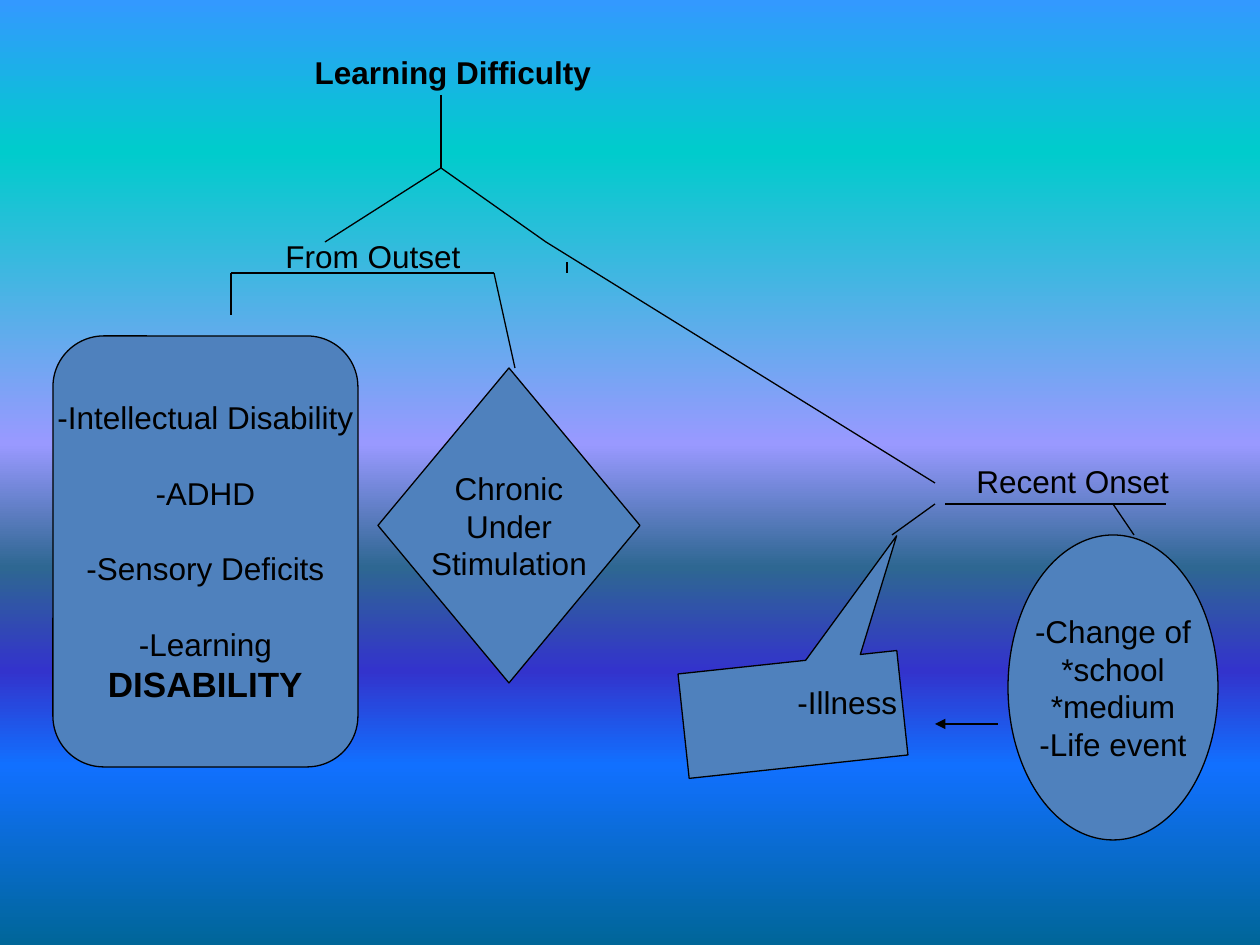
from lxml.etree import SubElement
from pptx import Presentation
from pptx.dml.color import RGBColor
from pptx.enum.shapes import MSO_CONNECTOR, MSO_SHAPE
from pptx.enum.text import MSO_ANCHOR as ANCHOR, MSO_AUTO_SIZE as FIT, PP_ALIGN as ALIGN
from pptx.oxml.ns import qn
from pptx.util import Pt

PX = 914400 / 126
INK, PANEL = "000000", "4F81BD"
BACKDROP = [(0, "3399FF"), (16, "00CCCC"), (47, "9999FF"), (60, "2E6792"),
            (71, "3333CC"), (81, "1170FF"), (100, "006699")]
BODY = {"name": "Arial", "size": Pt(18), "bold": False}
HEADING = {**BODY, "bold": True}
STRONG = {**HEADING, "size": Pt(20)}


def px(*lengths):
    return [round(length * PX) for length in lengths]


def color(hex_value):
    return RGBColor.from_string(hex_value)


def paint_background(slide):
    fill = slide.background.fill
    fill.gradient()
    fill.gradient_angle = 270
    stops = next(slide.element.iter(qn("a:gsLst")))
    for stop in list(stops):
        stops.remove(stop)
    for percent, hex_value in BACKDROP:
        stop = SubElement(stops, qn("a:gs"), pos=str(percent * 1000))
        SubElement(stop, qn("a:srgbClr"), val=hex_value)


def write(frame, lines, align=ALIGN.LEFT, anchor=ANCHOR.TOP, wrap=False, gap=0):
    """Each line is (text, font values, whether a gap stands above it)."""
    settings = {"auto_size": FIT.NONE, "word_wrap": wrap, "vertical_anchor": anchor}
    for key, value in settings.items():
        setattr(frame, key, value)
    for index, (text, font_values, spaced) in enumerate(lines):
        paragraph = frame.add_paragraph() if index else frame.paragraphs[0]
        paragraph.alignment = align
        paragraph.space_before = Pt(gap if spaced else 0)
        run = paragraph.add_run()
        run.text = text
        for key, value in font_values.items():
            setattr(run.font, key, value)
        run.font.color.rgb = color(INK)


def add_label(slide, text, left, top, width, height, wrap=False):
    label = slide.shapes.add_textbox(*px(left, top, width, height))
    write(label.text_frame, [(text, BODY, False)], wrap=wrap)


def add_panel(slide, preset, left, top, width, height, lines=(), gap=0):
    panel = slide.shapes.add_shape(preset, *px(left, top, width, height))
    panel.shadow.inherit = False
    panel.fill.solid()
    panel.fill.fore_color.rgb = color(PANEL)
    panel.line.color.rgb = color(INK)
    panel.line.width = Pt(0.75)
    write(panel.text_frame, lines, ALIGN.CENTER, ANCHOR.MIDDLE, gap=gap)
    return panel


def add_branches(slide, left, top, *routes):
    """Join the successive points of each route with straight lines."""
    branches = []
    for route in routes:
        for (x1, y1), (x2, y2) in zip(route, route[1:]):
            branch = slide.shapes.add_connector(
                MSO_CONNECTOR.STRAIGHT,
                *px(left + x1, top + y1, left + x2, top + y2))
            branch.line.color.rgb = color(INK)
            branch.line.width = Pt(0.75)
            SubElement(branch.element.spPr, qn("a:effectLst"))
            branches.append(branch)
    return branches


# Heading and the split into two kinds of onset
def build_root(slide, left, top):
    heading = slide.shapes.title
    heading.left, heading.top, heading.width, heading.height = px(left, top, 305, 50)
    write(heading.text_frame, [("Learning Difficulty", HEADING, False)])
    add_branches(slide, left, top,
                 [(139, 48), (139, 121), (23, 195)],
                 [(139, 121), (244, 195), (633, 436)],
                 [(265, 226), (265, 215)])


# Difficulties present from the outset
def build_from_outset(slide, left, top):
    add_label(slide, "From Outset", left + 220, top, 307, 88, wrap=True)
    add_branches(slide, left, top,
                 [(262, 42), (441, 42), (462, 137)],
                 [(273, 42), (178, 42), (178, 84)])
    add_panel(slide, MSO_SHAPE.FLOWCHART_ALTERNATE_PROCESS, left, top + 105, 305, 431, [
        ("-Intellectual Disability", BODY, False),
        ("-ADHD", BODY, True),
        ("-Sensory Deficits", BODY, True),
        ("-Learning", BODY, True),
        ("DISABILITY", STRONG, False),
    ], gap=21.6)
    add_panel(slide, MSO_SHAPE.DIAMOND, left + 325, top + 137, 262, 315,
              [(text, BODY, False) for text in ("Chronic", "Under", "Stimulation")])


# Difficulties of recent onset
def build_recent_onset(slide, left, top):
    add_branches(slide, left, top,
                 [(262, 48), (483, 48)],
                 [(252, 48), (209, 79)],
                 [(430, 48), (451, 79)])
    callout = add_panel(slide, MSO_SHAPE.RECTANGULAR_CALLOUT, left, top + 206, 220, 105)
    callout.rotation = 173.9
    callout.adjustments[0], callout.adjustments[1] = -0.555, 1.587
    add_label(slide, "Recent Onset", left + 281, top, 218, 50)
    add_label(slide, "-Illness", left + 102, top + 221, 125, 88)
    events = ("-Change of", "*school", "*medium", "-Life event")
    add_panel(slide, MSO_SHAPE.OVAL, left + 325, top + 79, 210, 305,
              [(text, BODY, False) for text in events])
    arrow, = add_branches(slide, left, top, [(315, 268), (252, 268)])
    SubElement(arrow.line._get_or_add_ln(), qn("a:tailEnd"), type="triangle")


def main():
    deck = Presentation()
    deck.slide_width, deck.slide_height = px(1260, 945)
    slide = deck.slides.add_slide(deck.slide_layouts[5])
    paint_background(slide)
    build_root(slide, 302, 47)
    build_from_outset(slide, 53, 231)
    build_recent_onset(slide, 683, 456)
    deck.save("out.pptx")


if __name__ == "__main__":
    main()
